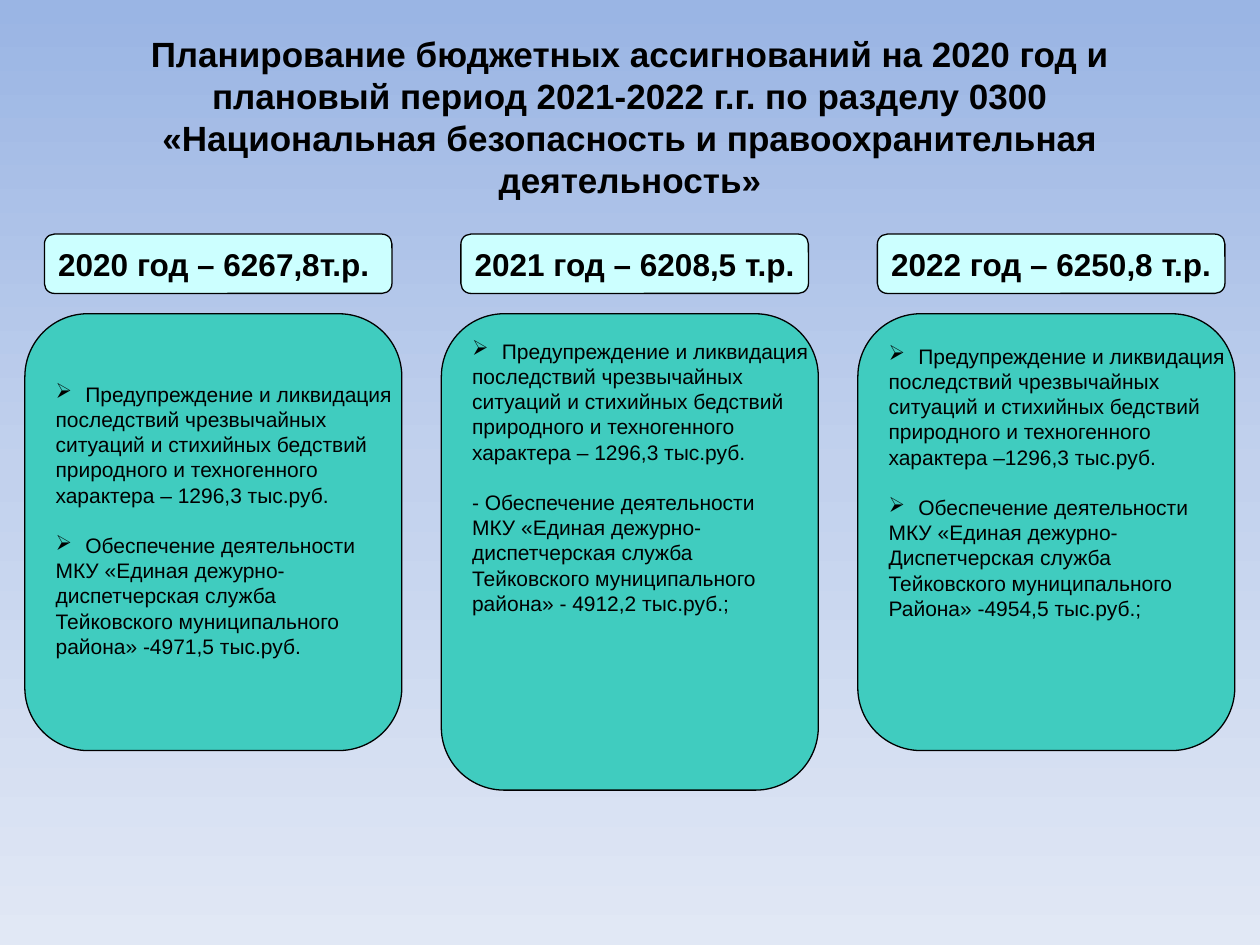
from copy import deepcopy

from lxml import etree
from pptx import Presentation
from pptx.dml.color import RGBColor
from pptx.enum.shapes import MSO_SHAPE
from pptx.enum.text import MSO_ANCHOR, MSO_AUTO_SIZE, PP_ALIGN
from pptx.oxml.ns import qn
from pptx.util import Pt

ROUNDED = MSO_SHAPE.ROUNDED_RECTANGLE
TOP, MIDDLE = MSO_ANCHOR.TOP, MSO_ANCHOR.MIDDLE
LEFT, CENTER = PP_ALIGN.LEFT, PP_ALIGN.CENTER
NO_AUTOFIT = MSO_AUTO_SIZE.NONE

BLACK = RGBColor(0x00, 0x00, 0x00)
PALE_CYAN = RGBColor(0xCC, 0xFF, 0xFF)
TURQUOISE = RGBColor(0x40, 0xCC, 0xBF)
SKY_TOP = RGBColor(0x9A, 0xB5, 0xE4)
SKY_MIDDLE = RGBColor(0xC2, 0xD1, 0xED)
SKY_BOTTOM = RGBColor(0xE1, 0xE8, 0xF5)

BULLET = "➢"
BULLET_INDENT = Pt(17)
LINE_HEIGHT = Pt(14.4)
COLUMN_LEFT, COLUMN_STEP, COLUMN_WIDTH = 14.2, 238, 215.4
HEADER_OFFSET, HEADER_TOP, HEADER_WIDTH, HEADER_HEIGHT = 11.2, 133.8, 198.6, 33.9
CARD_TOP = 179.3

# Header, card height, top inset, then the two items of each card.
# Lines that start with the bullet sign become real bulleted paragraphs.
EMERGENCY = [
    BULLET + "Предупреждение и ликвидация",
    "последствий чрезвычайных",
    "ситуаций и стихийных бедствий",
    "природного и техногенного",
]
COLUMNS = [
    ("2020 год – 6267,8т.р. ", 249.6, 28.1,
     EMERGENCY + ["характера – 1296,3 тыс.руб."],
     [BULLET + "Обеспечение деятельности", "МКУ «Единая дежурно-",
      "диспетчерская служба", "Тейковского муниципального",
      "района» -4971,5 тыс.руб."]),
    ("2021 год – 6208,5 т.р.", 272.2, 3.6,
     EMERGENCY + ["характера – 1296,3 тыс.руб."],
     ["- Обеспечение деятельности", "МКУ «Единая дежурно-",
      "диспетчерская служба", "Тейковского муниципального",
      "района» - 4912,2 тыс.руб.;"]),
    ("2022 год – 6250,8 т.р.", 249.6, 6.4,
     EMERGENCY + ["характера –1296,3 тыс.руб."],
     [BULLET + "Обеспечение деятельности", "МКУ «Единая дежурно-",
      "Диспетчерская служба", "Тейковского муниципального",
      "Района» -4954,5 тыс.руб.;"]),
]


def write_text(paragraph, text, size, bold=False, align=LEFT, space_before=0):
    """Fill a paragraph; a leading bullet sign turns into a hanging bullet."""
    paragraph.alignment = align
    paragraph.space_before = space_before
    if text.startswith(BULLET):
        text = text.removeprefix(BULLET)
        properties = paragraph._p.get_or_add_pPr()
        properties.set("marL", str(BULLET_INDENT))
        properties.set("indent", str(-BULLET_INDENT))
        etree.SubElement(properties, qn("a:buChar")).set("char", BULLET)
    run = paragraph.add_run()
    run.text = text
    run.font.name = "Arial"
    run.font.size = Pt(size)
    run.font.bold = bold
    run.font.color.rgb = BLACK


def add_panel(left, top, width, height, color, anchor):
    shape = slide.shapes.add_shape(ROUNDED, Pt(left), Pt(top), Pt(width), Pt(height))
    shape.shadow.inherit = False
    shape.fill.solid()
    shape.fill.fore_color.rgb = color
    shape.line.color.rgb = BLACK
    shape.line.width = Pt(0.75)
    shape.text_frame.word_wrap = False
    shape.text_frame.vertical_anchor = anchor
    return shape.text_frame


presentation = Presentation()
presentation.slide_width = Pt(720)
presentation.slide_height = Pt(540)
slide = presentation.slides.add_slide(presentation.slide_layouts[5])

# Background: three-colour vertical gradient
background = slide.background.fill
background.gradient()
background.gradient_angle = 270
stop_list = slide.element.find(".//" + qn("a:gsLst"))
stop_list.insert(1, deepcopy(stop_list[0]))
for stop, position, color in zip(
    background.gradient_stops, (0, 0.5, 1), (SKY_TOP, SKY_MIDDLE, SKY_BOTTOM)
):
    stop.position = position
    stop.color.rgb = color

# Title
title = slide.shapes.title
title.left, title.top, title.width, title.height = Pt(36), Pt(21.6), Pt(648), Pt(90)
title.text_frame.auto_size = NO_AUTOFIT
title.text_frame.vertical_anchor = MIDDLE
write_text(
    title.text_frame.paragraphs[0],
    "Планирование бюджетных ассигнований на 2020 год и плановый период "
    "2021-2022 г.г. по разделу 0300 «Национальная безопасность и "
    "правоохранительная деятельность»",
    size=20, bold=True, align=CENTER,
)

# One header and one card for each year
for index, (header, card_height, inset, *items) in enumerate(COLUMNS):
    left = COLUMN_LEFT + index * COLUMN_STEP
    frame = add_panel(left + HEADER_OFFSET, HEADER_TOP, HEADER_WIDTH,
                      HEADER_HEIGHT, PALE_CYAN, MIDDLE)
    write_text(frame.paragraphs[0], header, size=18, bold=True, align=CENTER)

    frame = add_panel(left, CARD_TOP, COLUMN_WIDTH, card_height, TURQUOISE, TOP)
    frame.margin_top = Pt(inset)
    paragraph = frame.paragraphs[0]
    for item_number, lines in enumerate(items):
        for line_number, line in enumerate(lines):
            if item_number or line_number:
                paragraph = frame.add_paragraph()
            starts_later_item = item_number > 0 and line_number == 0
            write_text(paragraph, line, size=12,
                       space_before=LINE_HEIGHT if starts_later_item else 0)

presentation.save("out.pptx")
